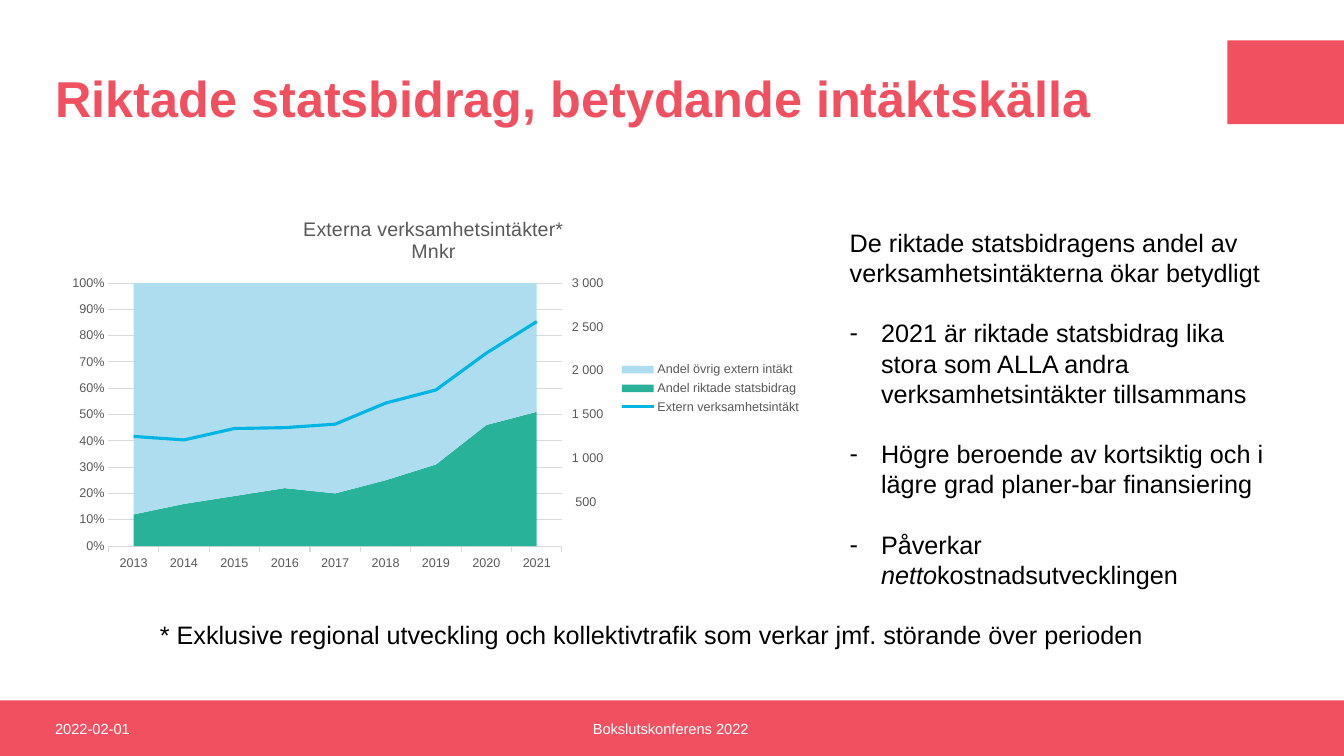
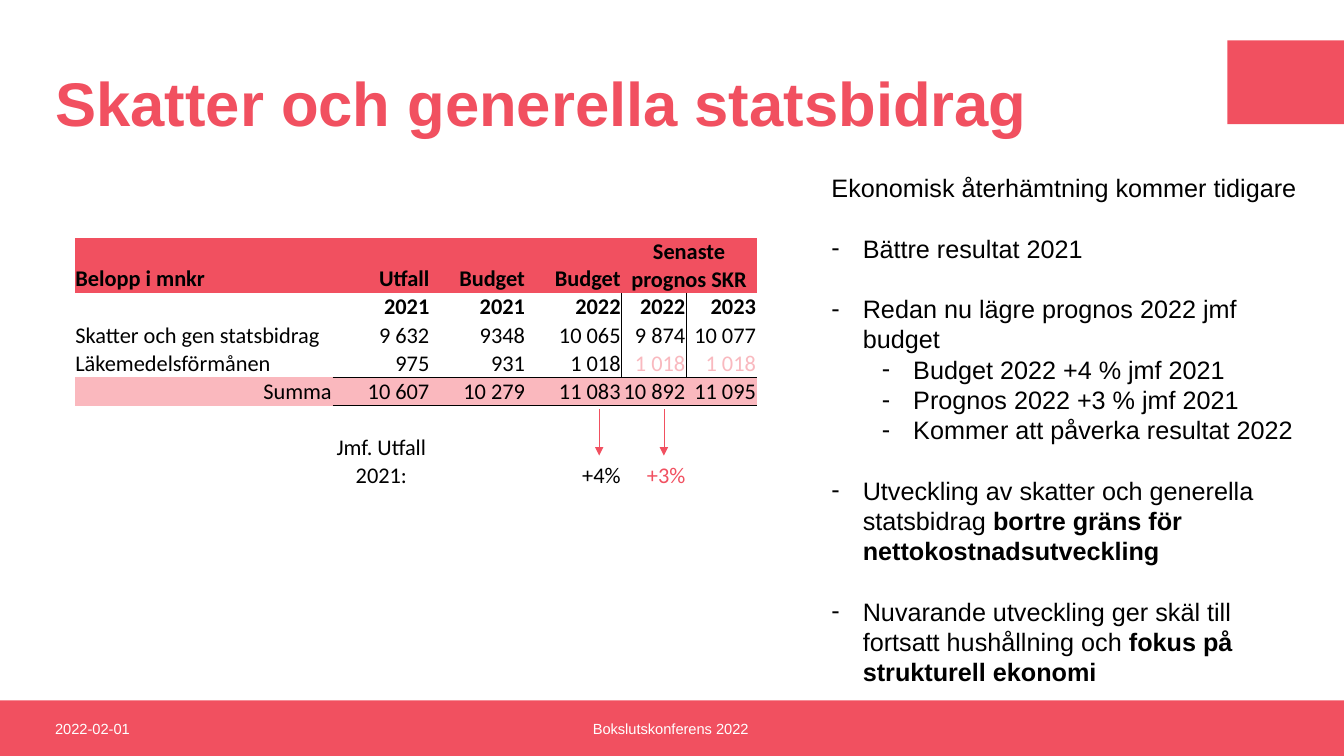
from copy import deepcopy

from lxml.etree import SubElement
from pptx import Presentation
from pptx.chart.data import CategoryChartData
from pptx.dml.color import RGBColor
from pptx.enum.chart import XL_CHART_TYPE as CHART, XL_LEGEND_POSITION as LEGEND
from pptx.enum.chart import XL_MARKER_STYLE as MARKER, XL_TICK_MARK as TICK
from pptx.enum.shapes import MSO_CONNECTOR, MSO_SHAPE
from pptx.enum.text import MSO_ANCHOR as ANCHOR, MSO_AUTO_SIZE as AUTO, PP_ALIGN as ALIGN
from pptx.oxml import parse_xml
from pptx.oxml.ns import nsdecls, qn
from pptx.util import Cm, Pt

COLORS = {
    "red": "F15060", "pink": "FAB8BE", "faded": "F9B9BF", "black": "000000",
    "white": "FFFFFF", "gray": "595959", "grid": "D9D9D9",
    "green": "28B29A", "pale": "AEDDEF", "blue": "00B4E4",
}
FONT = "Arial"
WIDTH, HEIGHT = 33.87, 19.05
BAND = (0, 17.65, WIDTH, 1.4)
TAB = (30.93, 1.02, 2.94, 2.11)
INDENT = 0.79

CATEGORIES = [str(year) for year in range(2013, 2022)]
SERIES = [
    ("Andel riktade statsbidrag", (12, 16, 19, 22, 20, 25, 31, 46, 51), "green"),
    ("Andel övrig extern intäkt", (88, 84, 81, 78, 80, 75, 69, 54, 49), "pale"),
    ("Extern verksamhetsintäkt",
     (1250, 1210, 1340, 1350, 1390, 1630, 1780, 2200, 2560), "blue"),
]

COLUMNS = [6.5, 2.46, 2.41, 2.41, 1.63, 1.78]
ROWS = [1.39, 0.71, 0.71, 0.71, 0.71, 0.71, 1.4]
CELLS = [
    ["Belopp i mnkr", "Utfall", "Budget", "Budget", "Senaste prognos SKR", ""],
    ["", "2021", "2021", "2022", "2022", "2023"],
    ["Skatter och gen statsbidrag", "9 632", "9348", "10 065", "9 874", "10 077"],
    ["Läkemedelsförmånen", "975", "931", "1 018", "1 018", "1 018"],
    ["Summa", "10 607", "10 279", "11 083", "10 892", "11 095"],
    [""] * 6,
    ["", "Jmf. Utfall 2021:", "", "+4%", "+3%", ""],
]
CELL_COLORS = {(3, 4): "faded", (3, 5): "faded", (6, 4): "red"}
ROW_FILLS = {0: "red", 4: "pink"}
CENTERED = {(0, 4), (6, 1)}
LEFT = {(0, 0), (2, 0), (3, 0)}

GRANTS = [
    (None, 0, [("De riktade statsbidragens andel av verksamhetsintäkterna ökar betydligt", "")]),
    (0, 1, [("2021 är riktade statsbidrag lika stora som ALLA andra "
             "verksamhetsintäkter tillsammans", "")]),
    (0, 1, [("Högre beroende av kortsiktig och i lägre grad planer-bar finansiering", "")]),
    (0, 1, [("Påverkar ", ""), ("netto", "i"), ("kostnadsutvecklingen", "")]),
]
TAXES = [
    (None, 0, [("Ekonomisk återhämtning kommer tidigare", "")]),
    (0, 1, [("Bättre resultat 2021", "")]),
    (0, 1, [("Redan nu lägre prognos 2022 jmf budget", "")]),
    (1, 0, [("Budget 2022 +4 % jmf 2021", "")]),
    (1, 0, [("Prognos 2022 +3 % jmf 2021", "")]),
    (1, 0, [("Kommer att påverka resultat 2022", "")]),
    (0, 1, [("Utveckling av skatter och generella statsbidrag ", ""),
            ("bortre gräns för nettokostnadsutveckling", "b")]),
    (0, 1, [("Nuvarande utveckling ger skäl till fortsatt hushållning och ", ""),
            ("fokus på strukturell ekonomi", "b")]),
]


def rgb(name):
    """Return the named colour."""
    return RGBColor.from_string(COLORS[name])


def cm_box(box):
    """Return a box given in centimetres as lengths."""
    return [Cm(v) for v in box]


def style(font, size, color, bold=None, name=FONT):
    """Format a font."""
    font.name, font.size, font.bold = name, Pt(size), bold
    font.color.rgb = rgb(color)


def place(sp, box):
    """Move and size a placeholder."""
    sp.left, sp.top, sp.width, sp.height = cm_box(box)


def add_bands(slide):
    """Draw the red bands and hand them to the slide's layout."""
    tree = slide.slide_layout.shapes.element
    for number, box in enumerate((BAND, TAB)):
        sp = slide.shapes.add_shape(MSO_SHAPE.RECTANGLE, *cm_box(box))
        sp.shadow.inherit = False
        sp.fill.solid()
        sp.fill.fore_color.rgb = rgb("red")
        sp.line.fill.background()
        sp.element.xpath("./p:nvSpPr/p:cNvPr")[0].set("id", str(100 + number))
        tree.insert(2 + number, sp.element)


def add_text(slide, box, text, size, color, align=ALIGN.LEFT, anchor=ANCHOR.TOP, wrap=True):
    """Add a one-paragraph text box."""
    tf = slide.shapes.add_textbox(*cm_box(box)).text_frame
    tf.word_wrap, tf.vertical_anchor = wrap, anchor
    tf.text = text
    p = tf.paragraphs[0]
    p.alignment = align
    style(p.runs[0].font, size, color)


def add_footer(slide, box):
    """Place the date and the event name in the bottom band."""
    left, top, width, height = box
    middle = 13.97
    parts = [
        ((left + 1.14, top, 7.62, height), "2022-02-01", ALIGN.LEFT),
        ((left + (width - middle) / 2 - 0.03, top, middle, height),
         "Bokslutskonferens 2022", ALIGN.CENTER),
    ]
    for part, text, align in parts:
        add_text(slide, part, text, 10.5, "white", align, ANCHOR.MIDDLE)


def add_title(slide, box, text, size):
    """Fill the title placeholder."""
    sp = slide.shapes.title
    place(sp, box)
    tf = sp.text_frame
    tf.text = text
    tf.auto_size, tf.vertical_anchor = AUTO.NONE, ANCHOR.MIDDLE
    p = tf.paragraphs[0]
    p.alignment, p.line_spacing = ALIGN.LEFT, 0.9
    style(p.runs[0].font, size, "red", True)


def add_body(slide, box, items):
    """Fill the body placeholder with an intro and dashed points."""
    sp = slide.placeholders[1]
    place(sp, box)
    tf = sp.text_frame
    tf.auto_size, tf.vertical_anchor, tf.word_wrap = AUTO.NONE, ANCHOR.TOP, True
    for i, (level, gap, runs) in enumerate(items):
        p = tf.paragraphs[0] if i == 0 else tf.add_paragraph()
        p.level = level or 0
        pPr = p._p.get_or_add_pPr()
        if level is None:
            pPr.set("marL", "0")
            pPr.set("indent", "0")
            SubElement(pPr, qn("a:buNone"))
        else:
            pPr.set("marL", str(Cm(INDENT + 1.27 * level)))
            pPr.set("indent", str(Cm(-INDENT)))
            SubElement(pPr, qn("a:buFont"), typeface=FONT)
            SubElement(pPr, qn("a:buChar"), char="-")
        p.space_before = Pt(21.6 * gap)
        for text, mark in runs:
            r = p.add_run()
            r.text = text
            style(r.font, 18, "black", mark == "b")
            r.font.italic = mark == "i"


def add_line_plot(chart):
    """Move the last series to a line on a second value axis."""
    area = chart.plots[0]._element
    plot_area = area.getparent()
    line = parse_xml(
        f'<c:lineChart {nsdecls("c")}><c:grouping val="standard"/><c:varyColors val="0"/>'
        '<c:marker val="1"/><c:axId val="5001"/><c:axId val="5002"/></c:lineChart>')
    line.insert(2, area.findall(qn("c:ser"))[-1])
    area.addnext(line)
    cat, val = (deepcopy(axis._element) for axis in (chart.category_axis, chart.value_axis))
    for axis, own, other in ((cat, "5001", "5002"), (val, "5002", "5001")):
        axis.find(qn("c:axId")).set("val", own)
        axis.find(qn("c:crossAx")).set("val", other)
    cat.find(qn("c:delete")).set("val", "1")
    val.remove(val.find(qn("c:majorGridlines")))
    val.find(qn("c:axPos")).set("val", "r")
    val.find(qn("c:crosses")).set("val", "max")
    val.find(qn("c:numFmt")).set("formatCode", "#\\ ###")
    val.find(qn("c:majorTickMark")).set("val", "out")
    val.find(qn("c:majorUnit")).set("val", "500")
    val.find(qn("c:scaling")).find(qn("c:max")).set("val", "3000")
    chart.value_axis._element.addnext(val)
    val.addnext(cat)


def add_income_chart(slide, box):
    """Add the area chart of income shares with the income line."""
    data = CategoryChartData()
    data.categories = CATEGORIES
    for name, values, _ in SERIES:
        data.add_series(name, values)
    chart = slide.shapes.add_chart(CHART.AREA_STACKED_100, *cm_box(box), data).chart
    style(chart.font, 10, "black")
    chart.plots[0].vary_by_categories = False
    tf = chart.chart_title.text_frame
    tf.text = "Externa verksamhetsintäkter*"
    tf.add_paragraph().text = "Mnkr"
    for p in tf.paragraphs:
        style(p.runs[0].font, 14, "gray", False)
    chart.has_legend = True
    chart.legend.position, chart.legend.include_in_layout = LEGEND.RIGHT, False
    style(chart.legend.font, 9, "gray")

    cat, val = chart.category_axis, chart.value_axis
    for axis in (cat, val):
        style(axis.tick_labels.font, 9, "gray")
    cat.has_major_gridlines = False
    cat.major_tick_mark, val.major_tick_mark = TICK.OUTSIDE, TICK.NONE
    val.has_major_gridlines = True
    for fmt in (cat.format, val.major_gridlines.format):
        fmt.line.color.rgb = rgb("grid")
        fmt.line.width = Pt(0.75)
    val.format.line.fill.background()
    val.minimum_scale, val.maximum_scale, val.major_unit = 0, 1, 0.1
    val.tick_labels.number_format, val.tick_labels.number_format_is_linked = "0%", False
    val._element.find(qn("c:crossBetween")).set("val", "between")
    add_line_plot(chart)

    *areas, income = [s for plot in chart.plots for s in plot.series]
    for s, (_, _, color) in zip(areas, SERIES):
        s.format.fill.solid()
        s.format.fill.fore_color.rgb = rgb(color)
    income.smooth = False
    income.marker.style = MARKER.NONE
    income.format.line.color.rgb = rgb(SERIES[-1][2])
    income.format.line.width = Pt(2.25)

    plot_area = chart.plots[0]._element.getparent()
    for old in plot_area.findall(qn("c:layout")):
        plot_area.remove(old)
    layout = SubElement(plot_area, qn("c:layout"))
    manual = SubElement(layout, qn("c:manualLayout"))
    for tag, value in (("layoutTarget", "inner"), ("xMode", "edge"), ("yMode", "edge"),
                       ("x", "0.07"), ("y", "0.22"), ("w", "0.6"), ("h", "0.7")):
        SubElement(manual, qn(f"c:{tag}"), val=value)
    plot_area.insert(0, layout)


def add_border(cell, side):
    """Draw a thin black border on one side (L, R, T or B) of a cell."""
    tcPr = cell._tc.get_or_add_tcPr()
    ln = parse_xml(f'<a:ln{side} {nsdecls("a")} w="6350"><a:solidFill>'
                   f'<a:srgbClr val="{COLORS["black"]}"/></a:solidFill></a:ln{side}>')
    tcPr.insert(len(tcPr.xpath("a:lnL|a:lnR|a:lnT|a:lnB")), ln)


def fill_cell(cell, row, col, text):
    """Write and format one table cell."""
    cell.margin_left = cell.margin_right = cell.margin_top = Cm(0.02)
    cell.margin_bottom = 0
    cell.vertical_anchor = ANCHOR.BOTTOM
    if row in ROW_FILLS:
        cell.fill.solid()
        cell.fill.fore_color.rgb = rgb(ROW_FILLS[row])
    else:
        cell.fill.background()
    p = cell.text_frame.paragraphs[0]
    if text:
        p.text = text
        p.alignment = (ALIGN.CENTER if (row, col) in CENTERED
                       else ALIGN.LEFT if (row, col) in LEFT else ALIGN.RIGHT)
        style(p.runs[0].font, 16, CELL_COLORS.get((row, col), "black"), row < 2, "Calibri")
    else:
        SubElement(p._p, qn("a:endParaRPr"), sz="1600")
    borders = [("L", col == 4 and row in (1, 2, 3)), ("R", col == 3 and row in (1, 2, 3)),
               ("T", col > 0 and row == 4), ("B", col > 0 and row == 3)]
    for side, shown in borders:
        if shown:
            add_border(cell, side)


def add_tax_table(slide, left, top):
    """Add the table of tax income and the arrows to its comparison row."""
    box = (left, top, sum(COLUMNS), sum(ROWS))
    table = slide.shapes.add_table(len(ROWS), len(COLUMNS), *cm_box(box)).table
    table.first_row = table.horz_banding = False
    table._tbl.tblPr.find(qn("a:tableStyleId")).text = "{2D5ABB26-0587-4C30-8999-92F81FD0307C}"
    for column, width in zip(table.columns, COLUMNS):
        column.width = Cm(width)
    for i, height in enumerate(ROWS):
        table.rows[i].height = Cm(height)
        for j, text in enumerate(CELLS[i]):
            fill_cell(table.cell(i, j), i, j, text)
    table.cell(0, 4).merge(table.cell(0, 5))
    start = top + sum(ROWS[:5]) + 0.09
    for col in (3, 4):
        x = left + sum(COLUMNS[:col + 1]) - 0.56
        line = slide.shapes.add_connector(
            MSO_CONNECTOR.STRAIGHT, Cm(x), Cm(start), Cm(x), Cm(start + 1.17))
        line.line.color.rgb = rgb("red")
        line.line.width = Pt(0.5)
        SubElement(line.line._get_or_add_ln(), qn("a:tailEnd"), type="triangle")
        SubElement(line.element.spPr, qn("a:effectLst"))


def main():
    """Build and save the presentation."""
    prs = Presentation()
    prs.slide_width, prs.slide_height = Cm(WIDTH), Cm(HEIGHT)
    grants, taxes = (prs.slides.add_slide(prs.slide_layouts[1]) for _ in range(2))
    add_bands(grants)
    for slide in (grants, taxes):
        add_footer(slide, BAND)

    add_title(grants, (1.14, 1.47, 29.5, 2.16), "Riktade statsbidrag, betydande intäktskälla", 36)
    add_income_chart(grants, (1.4, 5.05, 19.05, 9.47))
    add_body(grants, (21.16, 5.59, 11.46, 10.26), GRANTS)
    add_text(grants, (3.78, 15.49, 25.63, 1.02),
             "* Exklusive regional utveckling och kollektivtrafik som verkar jmf. "
             "störande över perioden", 18, "black", wrap=False)

    add_title(taxes, (1.14, 1.02, 29.5, 3.35), "Skatter och generella statsbidrag", 44)
    add_tax_table(taxes, 1.88, 5.99)
    add_body(taxes, (20.7, 4.22, 12.57, 13.34), TAXES)
    prs.save("out.pptx")


if __name__ == "__main__":
    main()
